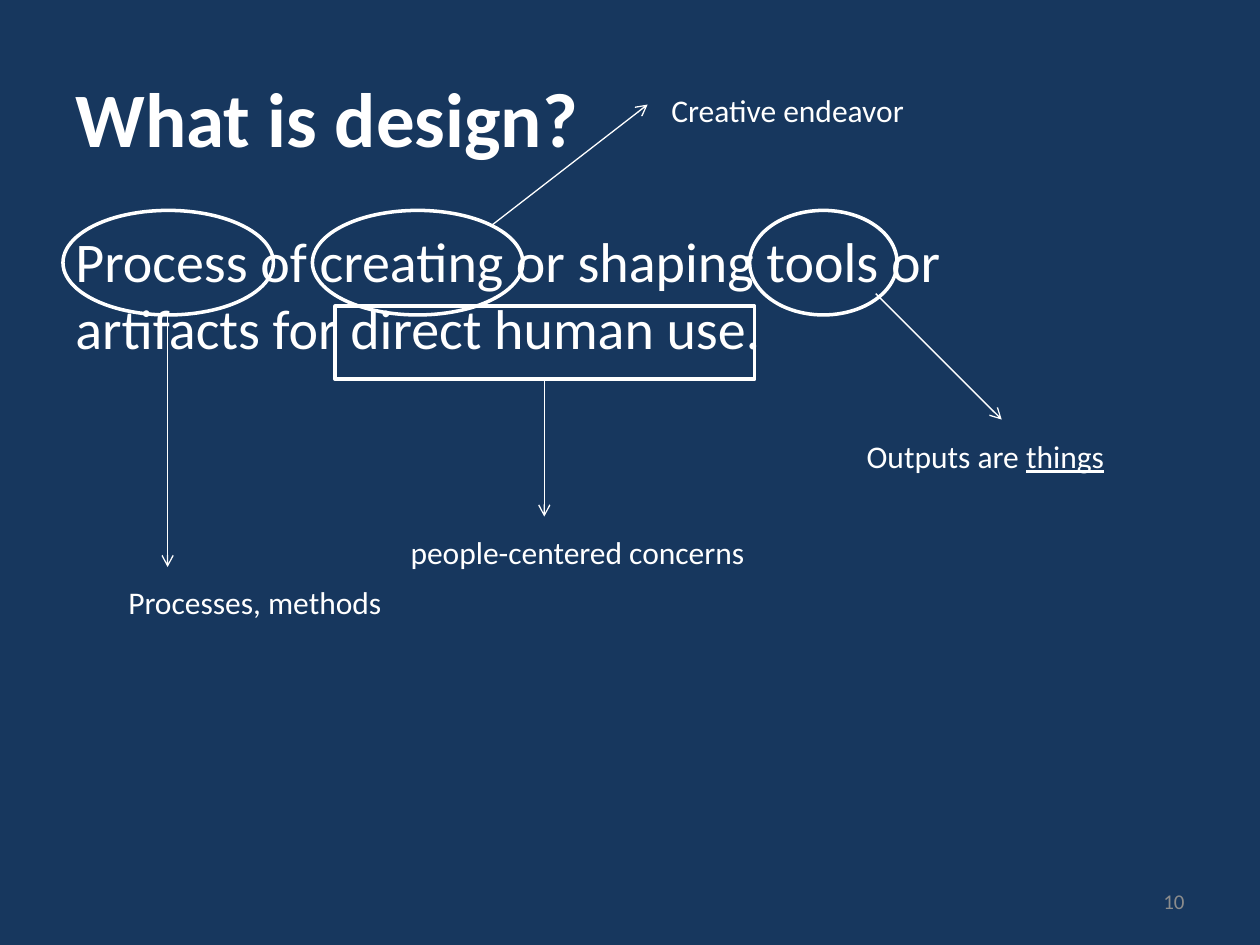
import pptx
import pptx.util
import pptx.dml.color
import pptx.enum.shapes
import pptx.enum.text
import pptx.oxml
from pptx.util import Inches

COLORS = {"background": "17375E", "foreground": "FFFFFF", "page": "8C8C8C"}
OVAL = pptx.enum.shapes.MSO_SHAPE.OVAL
BOX = pptx.enum.shapes.MSO_SHAPE.RECTANGLE
ALIGN = pptx.enum.text.PP_ALIGN
ANCHOR = pptx.enum.text.MSO_ANCHOR


def rgb(name):
    return pptx.dml.color.RGBColor.from_string(COLORS[name])


def write(holder, runs, size, color="foreground", bold=False,
          align=ALIGN.LEFT, anchor=ANCHOR.TOP, wrap=True):
    """Fill a text holder with (text, underlined) runs in one format."""
    frame = holder.text_frame
    frame.word_wrap = wrap
    frame.vertical_anchor = anchor
    paragraph = frame.paragraphs[0]
    paragraph.alignment = align
    paragraph.font.name = "Calibri"
    paragraph.font.size = pptx.util.Pt(size)
    paragraph.font.bold = bold
    paragraph.font.color.rgb = rgb(color)
    for text, underlined in runs:
        run = paragraph.add_run()
        run.text = text
        if underlined:
            run.font.underline = True


deck = pptx.Presentation()
deck.slide_width, deck.slide_height = Inches(10), Inches(7.5)
slide = deck.slides.add_slide(deck.slide_layouts[5])
slide.background.fill.solid()
slide.background.fill.fore_color.rgb = rgb("background")

# Title
title = slide.shapes.title
title.left, title.top = Inches(0.5), Inches(0.3)
title.width, title.height = Inches(9), Inches(1.25)
write(title, [("What is design?", False)], 44, bold=True, anchor=ANCHOR.MIDDLE)

# Definition
definition = slide.shapes.add_textbox(
    Inches(0.5), Inches(1.75), Inches(7.59), Inches(4.95))
write(definition, [("Process of creating or shaping tools or artifacts "
                    "for direct human use.", False)], 32)

# Page number
page_number = slide.shapes.add_textbox(
    Inches(7.17), Inches(6.95), Inches(2.33), Inches(0.4))
write(page_number, [("10", False)], 12, "page",
      align=ALIGN.RIGHT, anchor=ANCHOR.MIDDLE)

# Annotations: outline kind and place, arrow from and to, note place and runs
annotations = [
    (OVAL, (0.5, 1.67, 1.67, 0.83), (1.33, 2.5, 1.33, 4.5),
     (0.92, 4.58, 2.23, 0.4), [("Processes, methods", False)]),
    (OVAL, (2.48, 1.67, 1.67, 0.83), (3.9, 1.79, 5.14, 0.83),
     (5.23, 0.67, 2.07, 0.4), [("Creative endeavor", False)]),
    (OVAL, (5.95, 1.67, 1.17, 0.83), (6.95, 2.33, 7.95, 3.33),
     (6.78, 3.42, 2.11, 0.4), [("Outputs are ", False), ("things", True)]),
    (BOX, (2.66, 2.43, 3.33, 0.58), (4.32, 3.01, 4.32, 4.1),
     (3.16, 4.18, 2.89, 0.4), [("people-centered concerns", False)]),
]
for kind, outline_place, arrow_ends, note_place, note_runs in annotations:
    annotation = slide.shapes.add_group_shape()

    outline = annotation.shapes.add_shape(kind, *map(Inches, outline_place))
    outline.shadow.inherit = False
    outline.fill.background()
    outline.line.color.rgb = rgb("foreground")
    outline.line.width = pptx.util.Pt(2)

    arrow = annotation.shapes.add_connector(
        pptx.enum.shapes.MSO_CONNECTOR.STRAIGHT, *map(Inches, arrow_ends))
    arrow.line.color.rgb = rgb("foreground")
    arrow.line.width = pptx.util.Pt(0.75)
    line_xml = arrow.line._get_or_add_ln()
    tail = pptx.oxml.ns.qn("a:tailEnd")
    line_xml.append(line_xml.makeelement(tail, {"type": "arrow"}))
    effects = pptx.oxml.ns.qn("a:effectLst")
    arrow_xml = arrow._element.spPr
    arrow_xml.append(arrow_xml.makeelement(effects, {}))

    note = annotation.shapes.add_textbox(*map(Inches, note_place))
    write(note, note_runs, 18, wrap=False)
    note.text_frame.auto_size = pptx.enum.text.MSO_AUTO_SIZE.SHAPE_TO_FIT_TEXT

deck.save("out.pptx")
